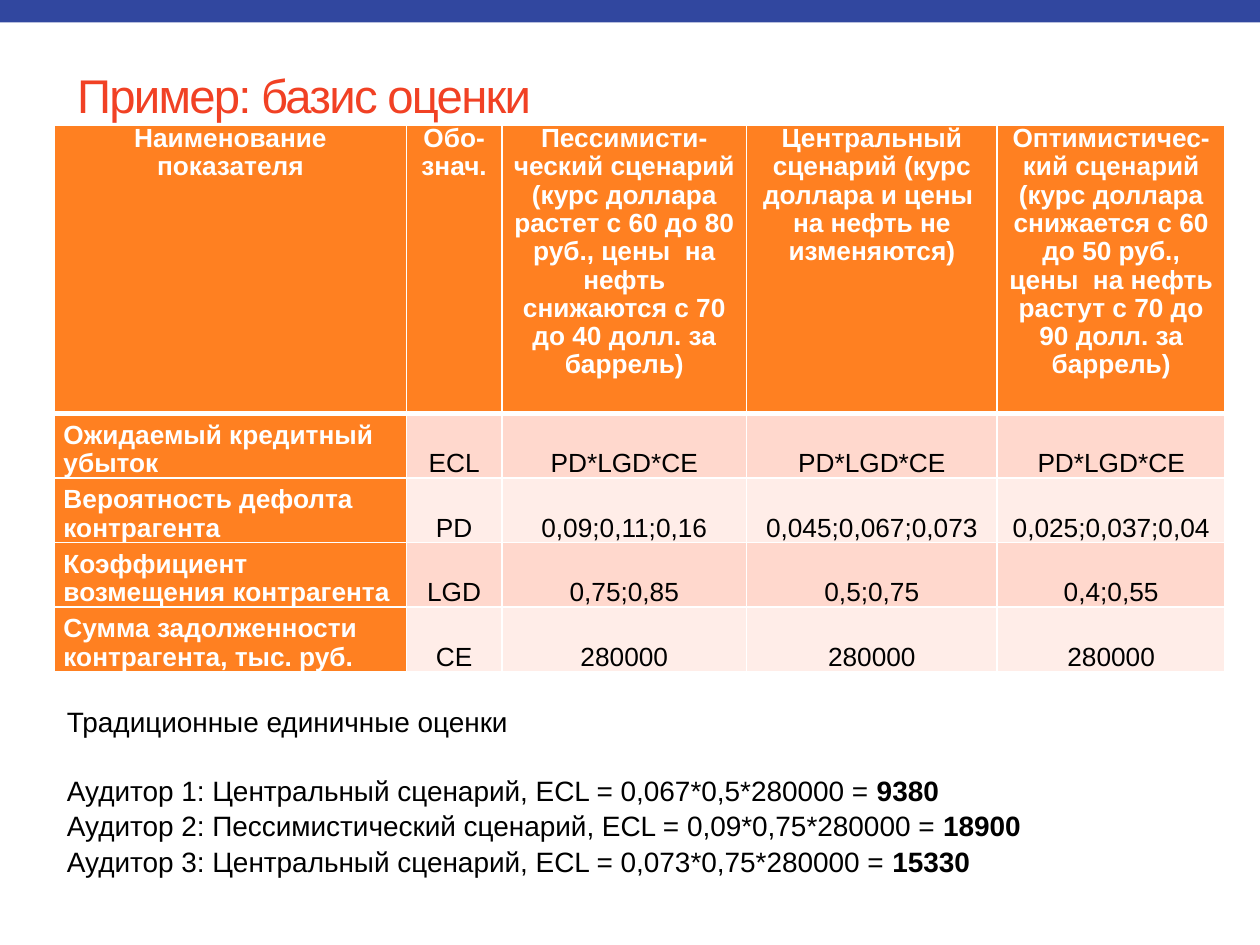
from dataclasses import dataclass

from lxml import etree
from pptx import Presentation
from pptx import util as u
from pptx.dml.color import RGBColor
from pptx.enum import shapes, text
from pptx.oxml import ns


@dataclass(frozen=True)
class Theme:
    font: str = "Arial"
    bar: str = "31479F"
    title: str = "F14124"
    head: str = "FF8021"
    bands: tuple = ("FFD8CD", "FFEDE8")
    white: str = "FFFFFF"
    black: str = "000000"
    title_size: float = 27
    table_size: float = 15
    body_size: float = 16


T = Theme()
LEFT, CENTER = text.PP_ALIGN.LEFT, text.PP_ALIGN.CENTER

HEADERS = [
    "Наименование показателя",
    "Обо-знач.",
    "Пессимисти-ческий сценарий (курс доллара растет с 60 до 80 руб., "
    "цены  на нефть снижаются с 70 до 40 долл. за баррель)",
    "Центральный сценарий (курс доллара и цены  на нефть не изменяются)",
    "Оптимистичес-кий сценарий (курс доллара снижается с 60 до 50 руб., "
    "цены  на нефть растут с 70 до 90 долл. за баррель)",
]
INDICATORS = [
    ["Ожидаемый кредитный убыток", "ECL"] + ["PD*LGD*CE"] * 3,
    ["Вероятность дефолта контрагента", "PD",
     "0,09;0,11;0,16", "0,045;0,067;0,073", "0,025;0,037;0,04"],
    ["Коэффициент возмещения контрагента", "LGD",
     "0,75;0,85", "0,5;0,75", "0,4;0,55"],
    ["Сумма задолженности контрагента, тыс. руб.", "CE"] + ["280000"] * 3,
]
COL_WIDTHS = [7.09, 1.93, 4.93, 5.05, 4.6]
HEADER_HEIGHT, ROW_HEIGHT = 5.82, 1.3

ESTIMATES = [
    ("Аудитор 1: Центральный сценарий, ECL = 0,067*0,5*280000 = ", "9380"),
    ("Аудитор 2: Пессимистический сценарий, ECL = 0,09*0,75*280000 = ", "18900"),
    ("Аудитор 3: Центральный сценарий, ECL = 0,073*0,75*280000 = ", "15330"),
]


def write(p, content, size, color=T.black, bold=False, align=LEFT, spacing=None):
    """Append a formatted run to a paragraph."""
    p.alignment = align
    if spacing:
        p.line_spacing = spacing
    r = p.add_run()
    r.text = content
    r.font.name, r.font.size, r.font.bold = T.font, u.Pt(size), bold
    r.font.color.rgb = RGBColor.from_string(color)
    return r


def add_bar(s, box, color):
    sp = s.shapes.add_shape(shapes.MSO_SHAPE.RECTANGLE, *map(u.Cm, box))
    sp.shadow.inherit = False
    sp.fill.solid()
    sp.fill.fore_color.rgb = RGBColor.from_string(color)
    sp.line.fill.background()


def add_top_band(s, x, y, w):
    # Blue band, its lower part covered by a white one
    add_bar(s, (x, y, w, 1.02), T.bar)
    add_bar(s, (x, y + 0.45, w, 1.05), T.white)


def place_title(s, box, content):
    sp = s.shapes.title
    sp.left, sp.top, sp.width, sp.height = map(u.Cm, box)
    sp.element.getparent().append(sp.element)  # in front of the band
    tf = sp.text_frame
    tf.vertical_anchor = text.MSO_ANCHOR.MIDDLE
    r = write(tf.paragraphs[0], content, T.title_size, T.title)
    r.font._element.set("spc", "-100")


def set_borders(cell, **widths):
    tcPr = cell._tc.get_or_add_tcPr()
    for side in "LRTB":
        ln = etree.SubElement(tcPr, ns.qn(f"a:ln{side}"),
                              w=str(u.Pt(widths.get(side, 1))))
        fill = etree.SubElement(ln, ns.qn("a:solidFill"))
        etree.SubElement(fill, ns.qn("a:srgbClr"), val=T.white)


def add_indicator_table(s, x, y):
    rows = [HEADERS] + INDICATORS
    heights = [HEADER_HEIGHT] + [ROW_HEIGHT] * len(INDICATORS)
    tbl = s.shapes.add_table(len(rows), len(COL_WIDTHS), u.Cm(x), u.Cm(y),
                             u.Cm(sum(COL_WIDTHS)), u.Cm(sum(heights))).table
    tbl.horz_banding = False
    for col, width in zip(tbl.columns, COL_WIDTHS):
        col.width = u.Cm(width)
    for i, (row, height, values) in enumerate(zip(tbl.rows, heights, rows)):
        row.height = u.Cm(height)
        for j, (cell, value) in enumerate(zip(row.cells, values)):
            strong = i == 0 or j == 0
            cell.margin_left = cell.margin_right = u.Cm(0.18)
            cell.margin_top = cell.margin_bottom = 0
            cell.vertical_anchor = text.MSO_ANCHOR.BOTTOM if i else text.MSO_ANCHOR.TOP
            set_borders(cell, T=3 if i == 1 else 1, B=1 if i else 3)
            cell.fill.solid()
            cell.fill.fore_color.rgb = RGBColor.from_string(
                T.head if strong else T.bands[(i - 1) % 2])
            write(cell.text_frame.paragraphs[0], value, T.table_size,
                  color=T.white if strong else T.black, bold=strong,
                  align=LEFT if i and j == 0 else CENTER, spacing=0.97)


def add_estimates(s, box):
    tf = s.shapes.add_textbox(*map(u.Cm, box)).text_frame
    tf.word_wrap = True
    write(tf.paragraphs[0], "Традиционные единичные оценки", T.body_size, spacing=1.05)
    for i, (formula, result) in enumerate(ESTIMATES):
        p = tf.add_paragraph()
        if i == 0:
            p.space_before = u.Pt(19.3)  # one line apart from the heading
        write(p, formula, T.body_size, spacing=1.05)
        write(p, result, T.body_size, bold=True, spacing=1.05)


def main():
    prs = Presentation()
    prs.slide_width, prs.slide_height = u.Cm(25.4), u.Cm(19.05)
    s = prs.slides.add_slide(prs.slide_layouts[5])
    add_top_band(s, 0, 0, 25.4)
    place_title(s, (1.3, 0.53, 22.86, 2.74), "Пример: базис оценки")
    add_indicator_table(s, 1.1, 2.52)
    add_estimates(s, (1.1, 14.05, 23.2, 3.68))
    prs.save("out.pptx")


if __name__ == "__main__":
    main()
